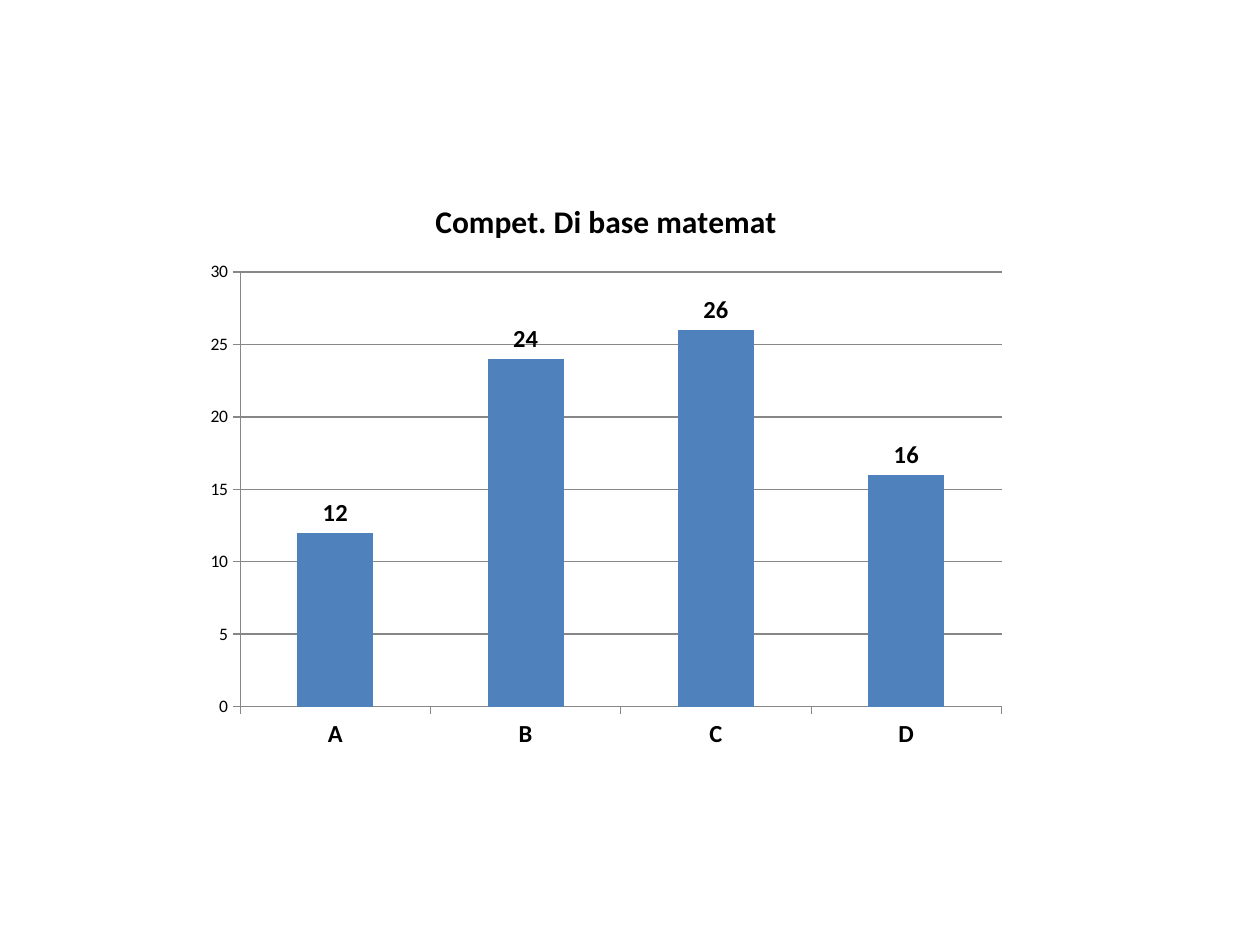
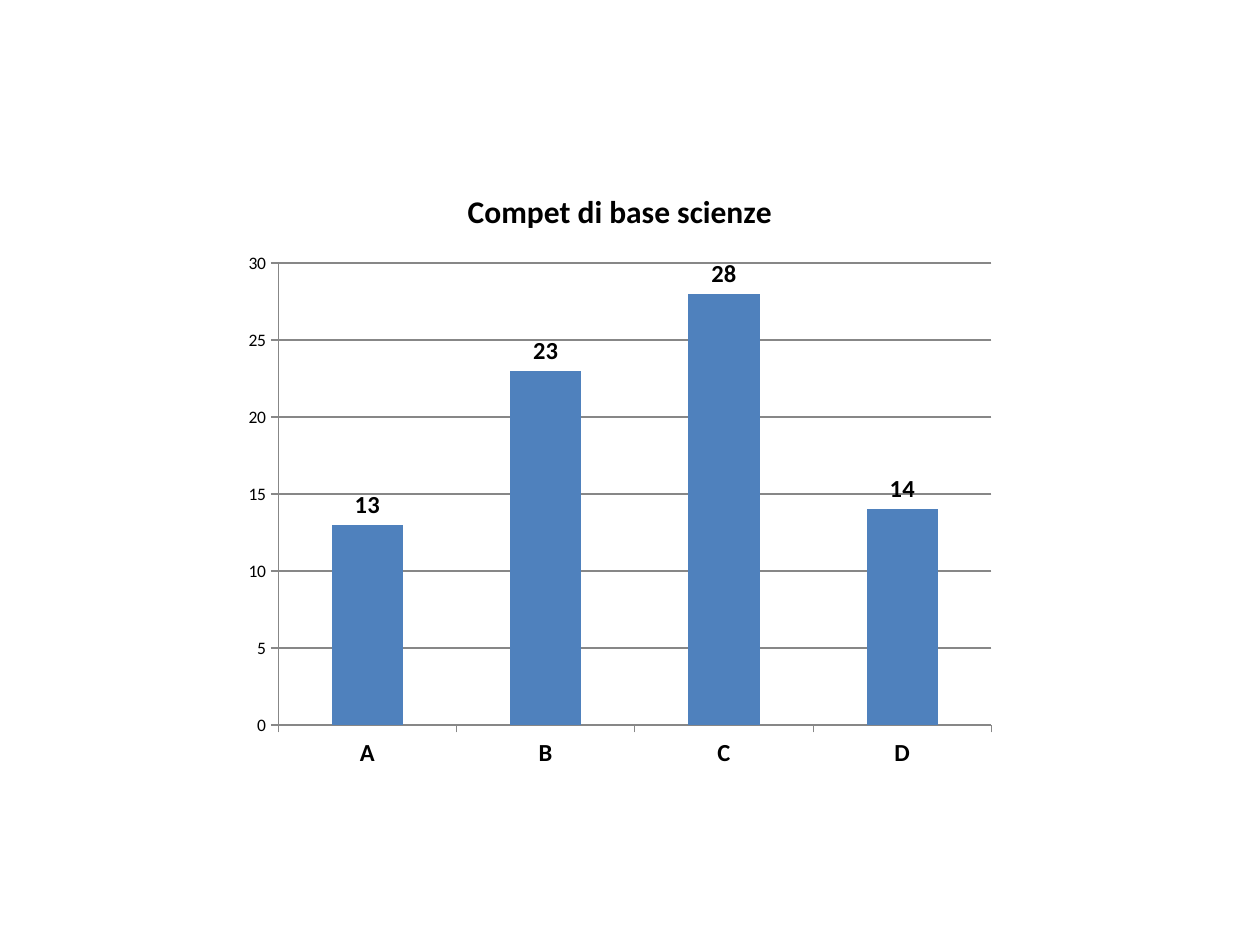
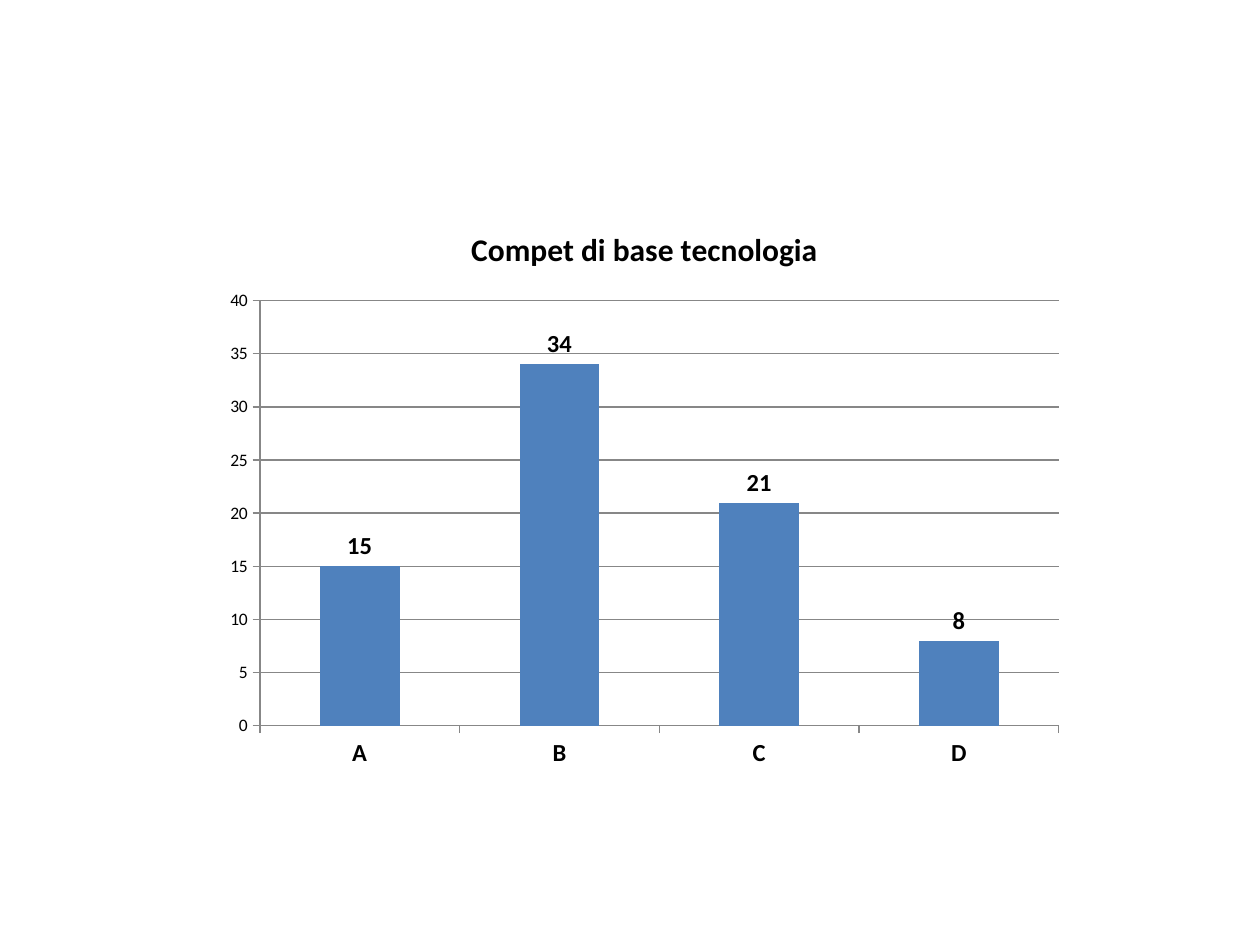
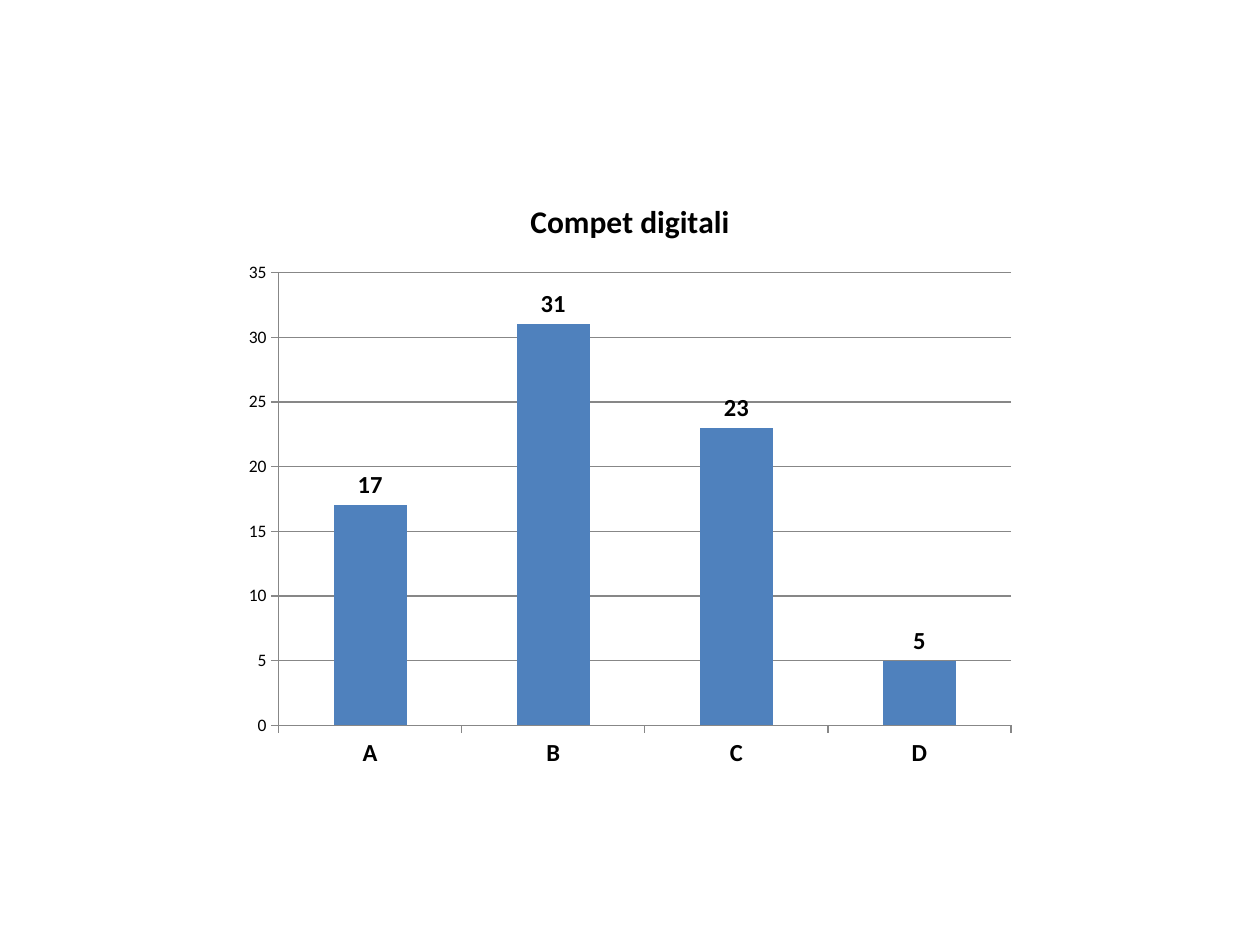
from pptx import Presentation
from pptx import util as u
from pptx.chart import data
from pptx.dml import color
from pptx.enum import chart as ch

PX_PER_INCH = 126
BLANK_LAYOUT = 6


def px(length):
    return u.Emu(round(length * 914400 / PX_PER_INCH))


def rgb(code):
    return color.RGBColor.from_string(code)


class Deck:
    FONT = "Calibri"
    INK = "000000"
    BAR = "4F81BD"
    GRID = "878787"
    BACKGROUND = "FFFFFF"
    TITLE_SIZE, LABEL_SIZE, SCALE_SIZE = 18, 14, 10

    def __init__(self, width, height):
        self.presentation = Presentation()
        self.presentation.slide_width = px(width)
        self.presentation.slide_height = px(height)
        self.slide = None

    def add_slide(self):
        layout = self.presentation.slide_layouts[BLANK_LAYOUT]
        self.slide = self.presentation.slides.add_slide(layout)
        background = self.slide.background.fill
        background.solid()
        background.fore_color.rgb = rgb(self.BACKGROUND)

    def style_font(self, font, size, bold=False):
        font.name = self.FONT
        font.size = u.Pt(size)
        font.bold = bold
        font.color.rgb = rgb(self.INK)

    def style_line(self, line):
        line.color.rgb = rgb(self.GRID)
        line.width = u.Pt(0.75)

    def style_axis(self, axis, size, bold=False):
        axis.major_tick_mark = ch.XL_TICK_MARK.OUTSIDE
        axis.minor_tick_mark = ch.XL_TICK_MARK.NONE
        self.style_font(axis.tick_labels.font, size, bold)
        self.style_line(axis.format.line)

    def column_chart(self, title, levels, scores, box):
        results = data.CategoryChartData()
        results.categories = levels
        results.add_series(title, scores)
        chart = self.slide.shapes.add_chart(
            ch.XL_CHART_TYPE.COLUMN_CLUSTERED, *map(px, box), results
        ).chart
        self.style_font(chart.font, self.SCALE_SIZE)
        chart.has_legend = False
        chart.has_title = True
        heading = chart.chart_title.text_frame
        heading.text = title
        self.style_font(heading.paragraphs[0].font, self.TITLE_SIZE, True)
        chart.chart_title.include_in_layout = False

        self.style_axis(chart.category_axis, self.LABEL_SIZE, True)
        self.style_axis(chart.value_axis, self.SCALE_SIZE)
        chart.value_axis.has_major_gridlines = True
        self.style_line(chart.value_axis.major_gridlines.format.line)

        plot = chart.plots[0]
        plot.gap_width = 150
        plot.vary_by_categories = False
        bars = plot.series[0]
        bars.format.fill.solid()
        bars.format.fill.fore_color.rgb = rgb(self.BAR)
        labels = bars.data_labels
        labels.show_value = True
        labels.position = ch.XL_LABEL_POSITION.OUTSIDE_END
        self.style_font(labels.font, self.LABEL_SIZE, True)

    def save(self):
        self.presentation.save("out.pptx")


LEVELS = ("A", "B", "C", "D")
COMPETENCES = (
    ("Compet. Di base matemat", (12, 24, 26, 16), (194, 175, 824, 586)),
    ("Compet di base scienze", (13, 23, 28, 14), (233, 165, 774, 615)),
    ("Compet di base tecnologia", (15, 34, 21, 8), (213, 204, 863, 576)),
    ("Compet digitali", (17, 31, 23, 5), (233, 175, 794, 605)),
)


def main():
    deck = Deck(1260, 945)
    for title, scores, box in COMPETENCES:
        deck.add_slide()
        deck.column_chart(title, LEVELS, scores, box)
    deck.save()


if __name__ == "__main__":
    main()
